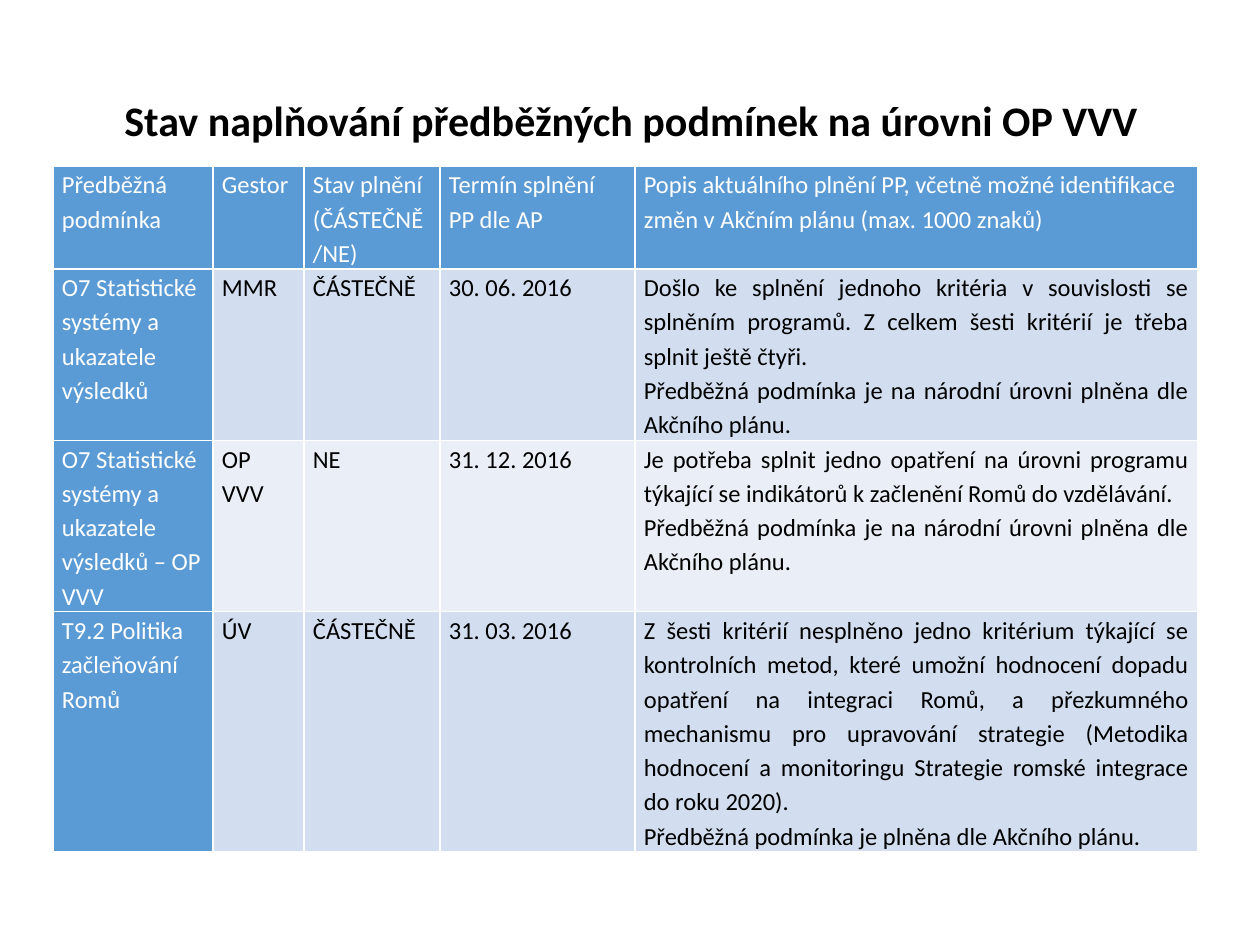
from lxml.etree import SubElement
from pptx import Presentation
from pptx.dml.color import RGBColor
from pptx.enum.text import MSO_ANCHOR, PP_ALIGN
from pptx.oxml.ns import qn
from pptx.util import Pt

EMU_PER_PX = 914400 / 126

BLACK = RGBColor(0x00, 0x00, 0x00)
WHITE = RGBColor(0xFF, 0xFF, 0xFF)
BLUE = RGBColor(0x5B, 0x9B, 0xD5)
BANDS = (RGBColor(0xD2, 0xDE, 0xEF), RGBColor(0xEA, 0xEF, 0xF7))

TITLE = "Stav naplňování předběžných podmínek na úrovni OP VVV"
TITLE_BOX = (64, 81, 1134, 84)
TITLE_FONT = {"name": "Calibri", "size": Pt(24), "bold": True}
CELL_FONT = {"name": "Calibri", "size": Pt(14), "bold": False}

TABLE_ORIGIN = (53, 166)
COLUMN_WIDTHS = (160, 91, 136, 195, 563)
ROW_HEIGHTS = (90, 150, 150, 210)
CELL_MARGIN = 9
JUSTIFIED_COLUMNS = (2, 4)

NATIONAL_LEVEL = "Předběžná podmínka je na národní úrovni plněna dle Akčního plánu."
# Each line of a cell is one paragraph.
CONDITIONS = (
    ("Předběžná podmínka", "Gestor", "Stav plnění\n(ČÁSTEČNĚ/NE)",
     "Termín splnění PP dle AP",
     "Popis aktuálního plnění PP, včetně možné identifikace změn "
     "v Akčním plánu (max. 1000 znaků)"),
    ("O7 Statistické systémy a ukazatele výsledků", "MMR", "ČÁSTEČNĚ",
     "30. 06. 2016",
     "Došlo ke splnění jednoho kritéria v souvislosti se splněním programů. "
     "Z celkem šesti kritérií je třeba splnit ještě čtyři.\n" + NATIONAL_LEVEL),
    ("O7 Statistické systémy a ukazatele výsledků – OP VVV", "OP VVV", "NE",
     "31. 12. 2016",
     "Je potřeba splnit jedno opatření na úrovni programu týkající se "
     "indikátorů k začlenění Romů do vzdělávání.\n" + NATIONAL_LEVEL),
    ("T9.2 Politika začleňování Romů", "ÚV", "ČÁSTEČNĚ", "31. 03. 2016",
     "Z šesti kritérií nesplněno jedno kritérium týkající se kontrolních "
     "metod, které umožní hodnocení dopadu opatření na integraci Romů, "
     "a přezkumného mechanismu pro upravování strategie (Metodika hodnocení "
     "a monitoringu Strategie romské integrace do roku 2020).\n"
     "Předběžná podmínka je plněna dle Akčního plánu."),
)


def px(length):
    return round(length * EMU_PER_PX)


def apply_format(target, values):
    for attribute, value in values.items():
        setattr(target, attribute, value)


def add_title(slide, box):
    title = slide.shapes.title
    left, top, width, height = map(px, box)
    apply_format(title, {"left": left, "top": top, "width": width, "height": height})
    title.text_frame.text = TITLE
    title.text_frame.vertical_anchor = MSO_ANCHOR.MIDDLE
    heading = title.text_frame.paragraphs[0]
    apply_format(heading, {"alignment": PP_ALIGN.CENTER, "line_spacing": 0.9})
    apply_format(heading.font, TITLE_FONT)
    heading.font.color.rgb = BLACK


def add_borders(cell):
    properties = cell._tc.get_or_add_tcPr()
    for side in ("lnL", "lnR", "lnT", "lnB"):
        border = SubElement(properties, qn(f"a:{side}"), w=str(Pt(1)))
        fill = SubElement(border, qn("a:solidFill"))
        SubElement(fill, qn("a:srgbClr"), val=str(WHITE))


def fill_cell(cell, text, fill_color, text_color, alignment):
    apply_format(cell, {"margin_left": px(CELL_MARGIN), "margin_right": px(CELL_MARGIN),
                        "margin_top": 0, "margin_bottom": 0})
    add_borders(cell)
    cell.fill.solid()
    cell.fill.fore_color.rgb = fill_color
    cell.text_frame.text = text
    for paragraph in cell.text_frame.paragraphs:
        apply_format(paragraph, {"alignment": alignment, "line_spacing": 1.15})
        for run in paragraph.runs:
            apply_format(run.font, CELL_FONT)
            run.font.color.rgb = text_color


def add_conditions_table(slide, origin):
    left, top = origin
    table = slide.shapes.add_table(
        len(ROW_HEIGHTS), len(COLUMN_WIDTHS), px(left), px(top),
        px(sum(COLUMN_WIDTHS)), px(sum(ROW_HEIGHTS))).table
    for column, width in zip(table.columns, COLUMN_WIDTHS):
        column.width = px(width)
    for row, height in zip(table.rows, ROW_HEIGHTS):
        row.height = px(height)
    for row_index, condition in enumerate(CONDITIONS):
        for column_index, text in enumerate(condition):
            is_heading = row_index == 0 or column_index == 0
            is_justified = row_index > 0 and column_index in JUSTIFIED_COLUMNS
            fill_cell(
                table.cell(row_index, column_index), text,
                BLUE if is_heading else BANDS[(row_index - 1) % 2],
                WHITE if is_heading else BLACK,
                PP_ALIGN.JUSTIFY if is_justified else PP_ALIGN.LEFT)


def main():
    presentation = Presentation()
    presentation.slide_width = px(1260)
    presentation.slide_height = px(945)
    slide = presentation.slides.add_slide(presentation.slide_layouts[5])
    add_title(slide, TITLE_BOX)
    add_conditions_table(slide, TABLE_ORIGIN)
    presentation.save("out.pptx")


if __name__ == "__main__":
    main()
